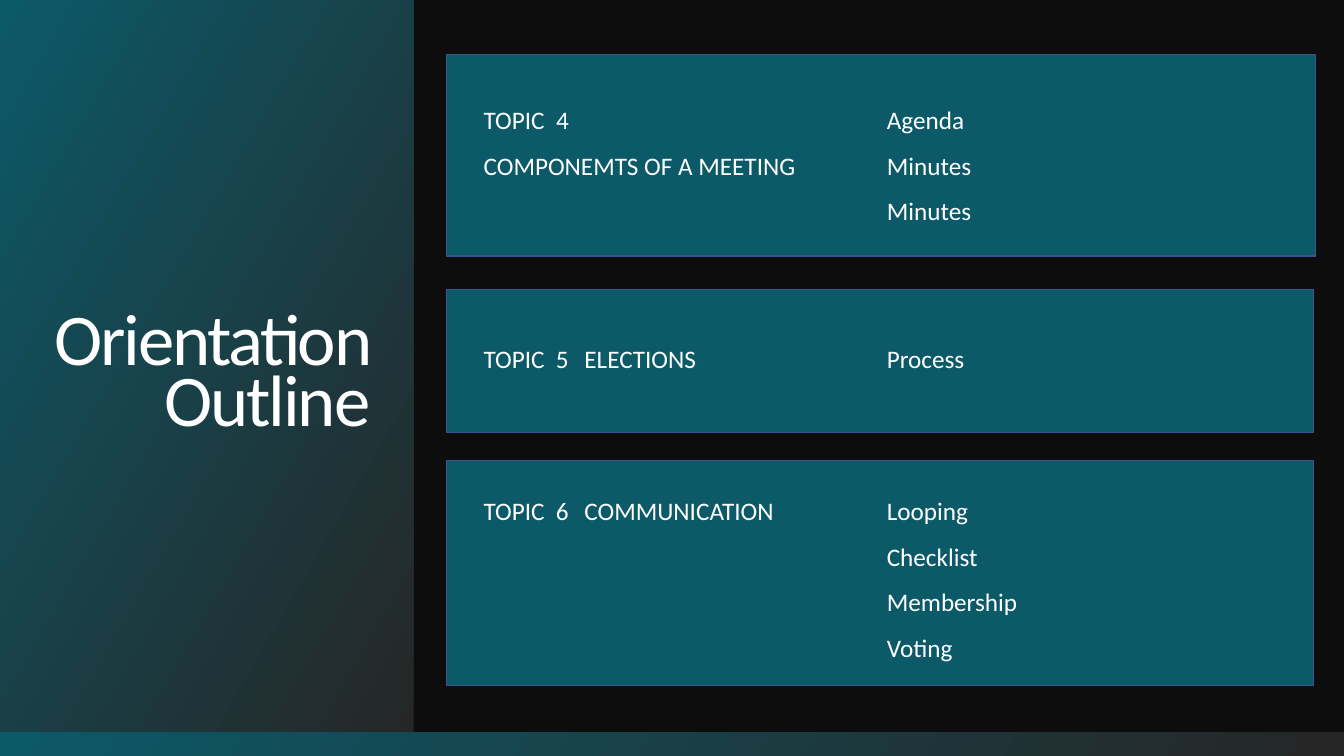
from pptx import Presentation
from pptx.dml.color import RGBColor
from pptx.enum.shapes import MSO_SHAPE
from pptx.enum.text import MSO_ANCHOR, PP_ALIGN
from pptx.oxml.ns import qn
from pptx.util import Pt
from lxml import etree

RECT = MSO_SHAPE.RECTANGLE
MIDDLE = MSO_ANCHOR.MIDDLE
LEFT, RIGHT = PP_ALIGN.LEFT, PP_ALIGN.RIGHT

WIDTH, HEIGHT = 960, 540
FONT = "Calibri"
BLACK, CHARCOAL, TEAL, BLUE, WHITE = "0D0D0D", "262626", "0C5968", "3D5392", "FFFFFF"
TAB_STOPS = (72, 288)

# panel box, text offset from panel top, text height, line spacing, rows of tabbed cells
TOPICS = [
    ((319, 38.9, 620.6, 144), 21.6, 105, 1.5,
     [("TOPIC  4", "Agenda"),
      ("COMPONEMTS OF A MEETING", "Minutes"),
      ("", "Minutes")]),
    ((319, 206.6, 619.2, 102.2), 35.3, 29, 1,
     [("TOPIC  5", "ELECTIONS", "Process")]),
    ((319, 329, 619.2, 160.6), 10.8, 138, 1.5,
     [("TOPIC  6", "COMMUNICATION", "Looping"),
      ("", "Checklist"),
      ("", "Membership"),
      ("", "Voting")]),
]


def rgb(value):
    return RGBColor.from_string(value)


def add_rect(slide, box):
    s = slide.shapes.add_shape(RECT, *map(Pt, box))
    s.shadow.inherit = False
    s.line.fill.background()
    return s


def add_gradient_rect(slide, box):
    """Rectangle running from charcoal at lower right to teal at upper left."""
    s = add_rect(slide, box)
    s.fill.gradient()
    s.fill.gradient_angle = 150
    for stop, position, color in zip(s.fill.gradient_stops, (0.01, 1), (CHARCOAL, TEAL)):
        stop.position = position
        stop.color.rgb = rgb(color)
    return s


def write(p, text, size=18, color=WHITE, align=LEFT, line_spacing=1, tracking=0, tabs=()):
    """Fill a paragraph; tracking is in points, tabs are left tab stops in points."""
    if tabs:
        tab_list = etree.SubElement(p._p.get_or_add_pPr(), qn("a:tabLst"))
        for stop in tabs:
            etree.SubElement(tab_list, qn("a:tab"), pos=str(Pt(stop)), algn="l")
    p.alignment = align
    p.line_spacing = line_spacing
    r = p.add_run()
    r.text = text
    r.font.name = FONT
    r.font.size = Pt(size)
    r.font.color.rgb = rgb(color)
    if tracking:
        r._r.get_or_add_rPr().set("spc", str(round(tracking * 100)))


def add_title_panel(slide, box, title):
    tf = add_gradient_rect(slide, box).text_frame
    tf.word_wrap = True
    tf.vertical_anchor = MIDDLE
    tf.margin_left = tf.margin_right = Pt(31)
    tf.margin_top = tf.margin_bottom = 0
    write(tf.paragraphs[0], title, size=52, align=RIGHT, line_spacing=0.7, tracking=-1.5)


def add_topic_panel(slide, box, text_offset, text_height, line_spacing, rows):
    panel = add_rect(slide, box)
    panel.fill.solid()
    panel.fill.fore_color.rgb = rgb(TEAL)
    panel.line.color.rgb = rgb(BLUE)
    panel.line.width = Pt(1)

    left, top, width, _ = box
    text_box = (left + 19.4, top + text_offset, width - 19.4, text_height)
    tf = slide.shapes.add_textbox(*map(Pt, text_box)).text_frame
    tf.word_wrap = True
    for i, cells in enumerate(rows):
        p = tf.add_paragraph() if i else tf.paragraphs[0]
        write(p, "\t".join(cells), line_spacing=line_spacing,
              tabs=TAB_STOPS[1 - len(cells):])


def main():
    prs = Presentation()
    prs.slide_width, prs.slide_height = Pt(WIDTH), Pt(HEIGHT)
    slide = prs.slides.add_slide(prs.slide_layouts[6])
    slide.background.fill.solid()
    slide.background.fill.fore_color.rgb = rgb(BLACK)

    add_title_panel(slide, (0, 0, 295.5, HEIGHT), "Orientation Outline")
    add_gradient_rect(slide, (0, 523, WIDTH, 17))
    for topic in TOPICS:
        add_topic_panel(slide, *topic)
    prs.save("out.pptx")


if __name__ == "__main__":
    main()
